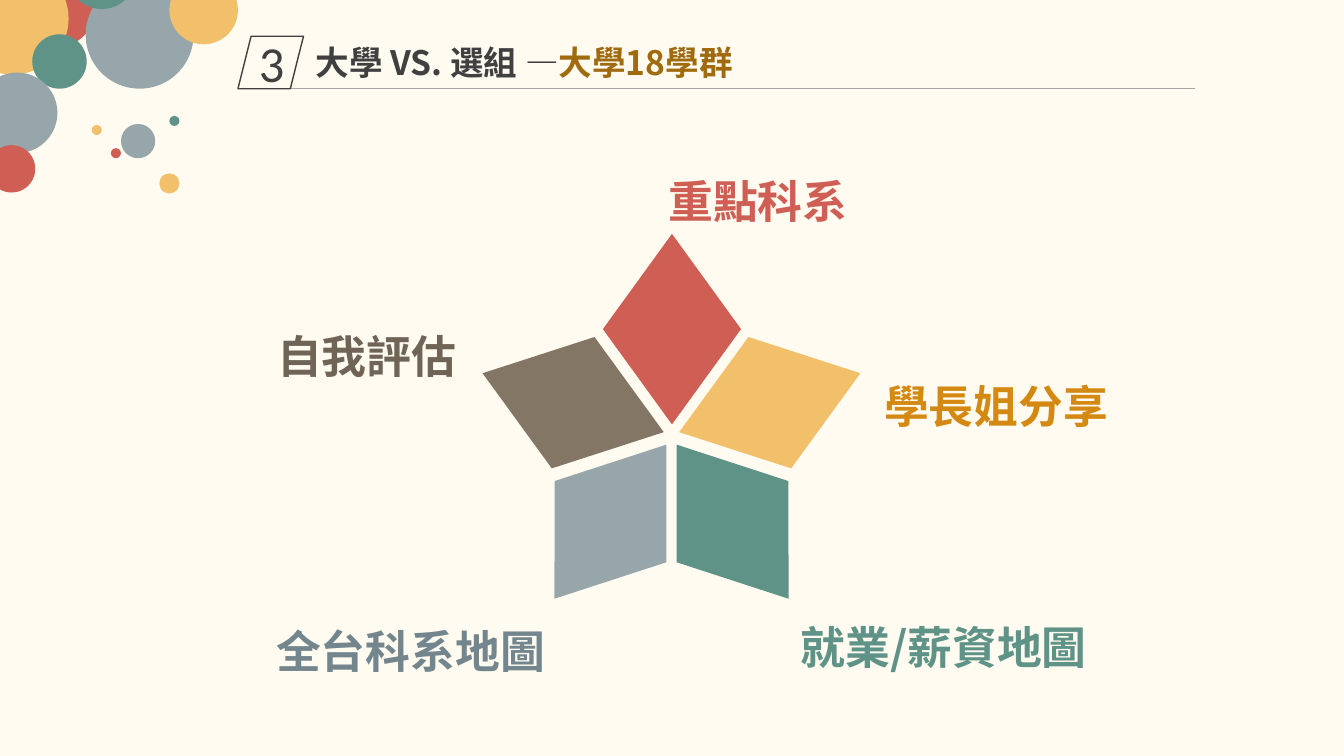
import math

import pptx
import pptx.dml.color
import pptx.enum.shapes
import pptx.enum.text
import pptx.oxml.ns
import pptx.util
from lxml import etree

SHAPE = pptx.enum.shapes.MSO_SHAPE
EMU_PER_PX = 9144  # 100 px to the inch
CJK_FONT = "Noto Sans CJK SC"

RED, YELLOW, GREEN = "CF5F55", "F2C06B", "5F9387"
GREY, BROWN, INK = "97A6AB", "837664", "404040"


def px(n):
    return pptx.util.Emu(round(n) * EMU_PER_PX)


def rgb(hex_color):
    return pptx.dml.color.RGBColor.from_string(hex_color)


class Deck:
    def __init__(self, width, height, background):
        self.prs = pptx.Presentation()
        self.prs.slide_width, self.prs.slide_height = px(width), px(height)
        self.s = self.prs.slides.add_slide(self.prs.slide_layouts[6])
        fill = self.s.background.fill
        fill.solid()
        fill.fore_color.rgb = rgb(background)

    def shape(self, kind, x, y, w, h, fill=None, line=None, rotation=0, parent=None):
        shapes = (parent or self.s).shapes
        sp = shapes.add_shape(kind, px(x), px(y), px(w), px(h))
        sp.shadow.inherit = False
        sp.rotation = rotation
        if fill:
            sp.fill.solid()
            sp.fill.fore_color.rgb = rgb(fill)
        else:
            sp.fill.background()
        if line:
            sp.line.color.rgb = rgb(line)
            sp.line.width = pptx.util.Pt(1)
        else:
            sp.line.fill.background()
        return sp

    def run(self, p, text, size, color, font=CJK_FONT, bold=True):
        r = p.add_run()
        r.text = text
        r.font.size = pptx.util.Pt(size)
        r.font.bold = bold
        r.font.color.rgb = rgb(color)
        r.font.name = font
        ea = etree.SubElement(r.font._element, pptx.oxml.ns.qn("a:ea"))
        ea.set("typeface", font)

    def text(self, x, y, w, h, size, runs):
        tf = self.s.shapes.add_textbox(px(x), px(y), px(w), px(h)).text_frame
        tf.word_wrap = True
        tf.auto_size = pptx.enum.text.MSO_AUTO_SIZE.SHAPE_TO_FIT_TEXT
        for text, color in runs:
            self.run(tf.paragraphs[0], text, size, color)

    def line(self, x1, y1, x2, y2, color, width):
        straight = pptx.enum.shapes.MSO_CONNECTOR.STRAIGHT
        cx = self.s.shapes.add_connector(straight, px(x1), px(y1), px(x2), px(y2))
        cx.line.color.rgb = rgb(color)
        cx.line.width = pptx.util.Pt(width)
        etree.SubElement(cx._element.spPr, pptx.oxml.ns.qn("a:effectLst"))


def main():
    deck = Deck(1333, 750, "FFFBF0")

    # Star of five diamonds, clockwise from the top
    center_x, center_y, radius_x, radius_y = 666, 432, 103, 106
    petal_w, petal_h = 137, 189
    for i, color in enumerate([RED, YELLOW, GREEN, GREY, BROWN]):
        angle = i * 72
        x = center_x + radius_x * math.sin(math.radians(angle))
        y = center_y - radius_y * math.cos(math.radians(angle))
        deck.shape(SHAPE.DIAMOND, x - petal_w / 2, y - petal_h / 2,
                   petal_w, petal_h, color, rotation=angle)

    # Labels around the star
    for x, y, w, label, color in [
        (265, 321, 263, "自我評估", "6F6455"),
        (264, 614, 314, "全台科系地圖", "73868D"),
        (784, 610, 350, "就業/薪資地圖", GREEN),
        (867, 371, 282, "學長姐分享", "D48A12"),
        (653, 167, 212, "重點科系", RED),
    ]:
        deck.text(x, y, w, 64, 32, [(label, color)])

    # Corner bubbles
    bubbles = deck.s.shapes.add_group_shape()
    for x, y, diameter, color in [
        (4, -44, 93, RED),
        (-43, -37, 111, YELLOW),
        (32, 34, 54, GREEN),
        (-23, 72, 80, GREY),
        (85, -19, 107, GREY),
        (67, -59, 68, GREEN),
        (-12, 144, 47, RED),
        (120, 123, 34, GREY),
        (110, 147, 10, RED),
        (91, 124, 10, YELLOW),
        (168, 115, 10, GREEN),
        (158, 172, 20, YELLOW),
        (168, -24, 68, YELLOW),
    ]:
        deck.shape(SHAPE.OVAL, x, y, diameter, diameter, color, parent=bubbles)

    # Heading: rule, number and title
    deck.line(284, 88, 1185, 88, "A6A6A6", 0.5)
    badge = deck.shape(SHAPE.PARALLELOGRAM, 236, 36, 65, 52, line=INK)
    tf = badge.text_frame
    tf.vertical_anchor = pptx.enum.text.MSO_ANCHOR.MIDDLE
    p = tf.paragraphs[0]
    p.alignment = pptx.enum.text.PP_ALIGN.CENTER
    deck.run(p, "3", 36, INK, font="Calibri", bold=False)
    deck.text(303, 37, 601, 50, 24,
              [("大學 VS. 選組 —", INK), ("大學18學群", "A06A0E")])

    deck.prs.save("out.pptx")


if __name__ == "__main__":
    main()
